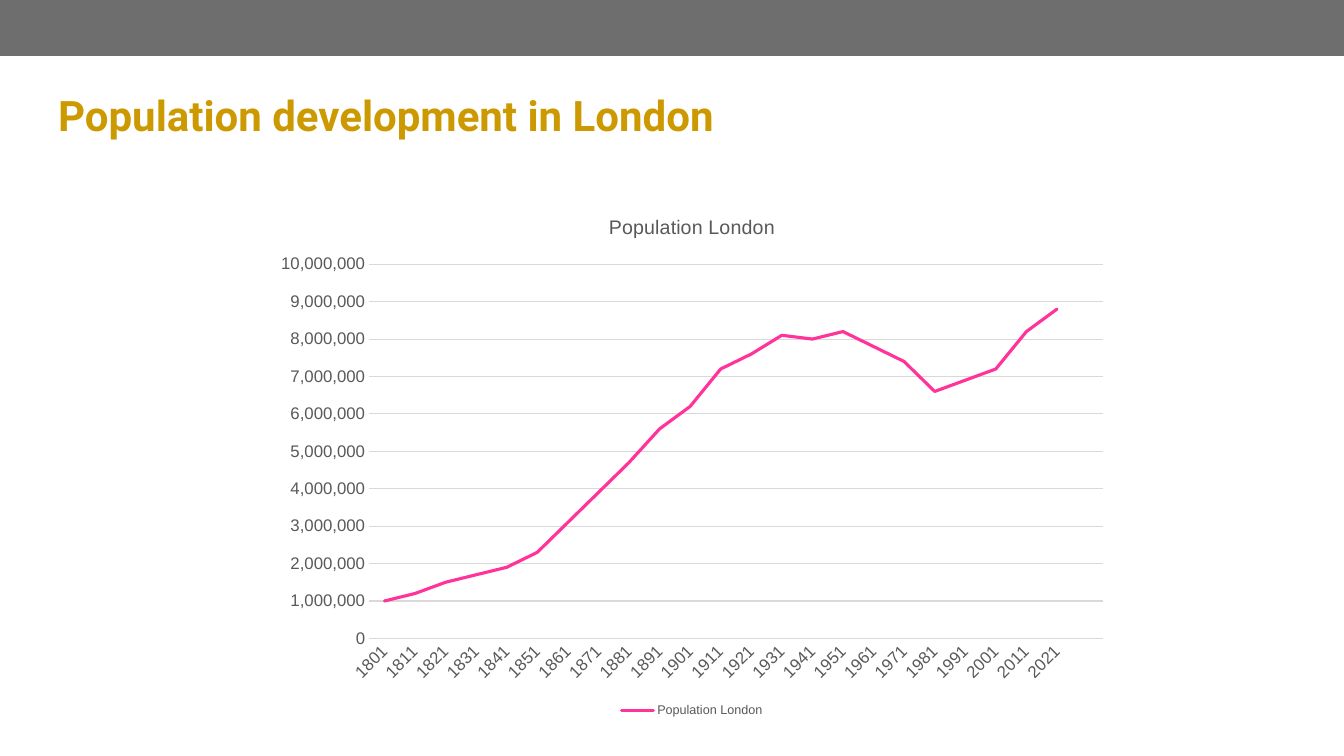
from pptx import Presentation
from pptx.chart.data import CategoryChartData
from pptx.dml.color import RGBColor
from pptx.enum.chart import XL_CHART_TYPE, XL_LEGEND_POSITION, XL_TICK_MARK
from pptx.enum.shapes import MSO_SHAPE
from pptx.enum.text import MSO_ANCHOR, PP_ALIGN
from pptx.util import Pt

PX = 914400 / 100.8
BAR_GREY = RGBColor(0x6E, 0x6E, 0x6E)
TITLE_GOLD = RGBColor(0xCC, 0x99, 0x00)
TEXT_GREY = RGBColor(0x59, 0x59, 0x59)
GRID_GREY = RGBColor(0xD9, 0xD9, 0xD9)
LINE_PINK = RGBColor(0xFF, 0x33, 0x99)


def px(*lengths):
    """Turn pixel lengths into EMU."""
    return [round(length * PX) for length in lengths]


def style_font(font, size, color, name="Arial", bold=False):
    font.name = name
    font.size = Pt(size)
    font.bold = bold
    font.color.rgb = color


deck = Presentation()
deck.slide_width, deck.slide_height = px(1344, 756)
slide = deck.slides.add_slide(deck.slide_layouts[5])

# Header bar
bar = slide.shapes.add_shape(MSO_SHAPE.RECTANGLE, *px(0, 0, 1344, 56))
bar.shadow.inherit = False
bar.fill.solid()
bar.fill.fore_color.rgb = BAR_GREY
bar.line.fill.background()

# Title
title = slide.shapes.title
title.left, title.top, title.width, title.height = px(48, 84, 1248, 111)
title.text_frame.text = "Population development in London"
title.text_frame.vertical_anchor = MSO_ANCHOR.TOP
heading = title.text_frame.paragraphs[0]
heading.alignment = PP_ALIGN.LEFT
style_font(heading.font, 30, TITLE_GOLD, "Roboto", True)

# Population chart: one census every ten years, then an empty slot
millions = [1.0, 1.2, 1.5, 1.7, 1.9, 2.3, 3.1, 3.9, 4.7, 5.6, 6.2, 7.2,
            7.6, 8.1, 8.0, 8.2, 7.8, 7.4, 6.6, 6.9, 7.2, 8.2, 8.8]
data = CategoryChartData(number_format="#,##0")
data.categories = [str(year) for year in range(1801, 2022, 10)] + [""]
data.add_series("Population London",
                [round(value * 1_000_000) for value in millions] + [None])
chart = slide.shapes.add_chart(
    XL_CHART_TYPE.LINE, *px(264, 195, 856, 527), data).chart
style_font(chart.font, 10, TEXT_GREY)

chart.has_title = True
chart.chart_title.include_in_layout = False
chart.chart_title.text_frame.text = "Population London"
style_font(chart.chart_title.text_frame.paragraphs[0].font, 14, TEXT_GREY)

chart.has_legend = True
chart.legend.position = XL_LEGEND_POSITION.BOTTOM
chart.legend.include_in_layout = False
style_font(chart.legend.font, 9, TEXT_GREY)

years, people = chart.category_axis, chart.value_axis
for axis in (years, people):
    axis.major_tick_mark = XL_TICK_MARK.NONE
    axis.minor_tick_mark = XL_TICK_MARK.NONE
    style_font(axis.tick_labels.font, 12, TEXT_GREY)

people.minimum_scale, people.maximum_scale = 0, 10_000_000
people.major_unit = 1_000_000
people.tick_labels.number_format = "#,##0"
people.tick_labels.number_format_is_linked = False
people.format.line.fill.background()
for line in (years.format.line, people.major_gridlines.format.line):
    line.color.rgb = GRID_GREY
    line.width = Pt(0.75)

# Slant the year labels by 45 degrees
label_body = years._element.txPr.bodyPr
label_body.set("rot", "-2700000")
label_body.set("vert", "horz")

plot = chart.plots[0]
plot.vary_by_categories = False
population = plot.series[0]
population.smooth = False
population.format.line.color.rgb = LINE_PINK
population.format.line.width = Pt(2.25)
population.format.line._ln.set("cap", "rnd")

deck.save("out.pptx")
